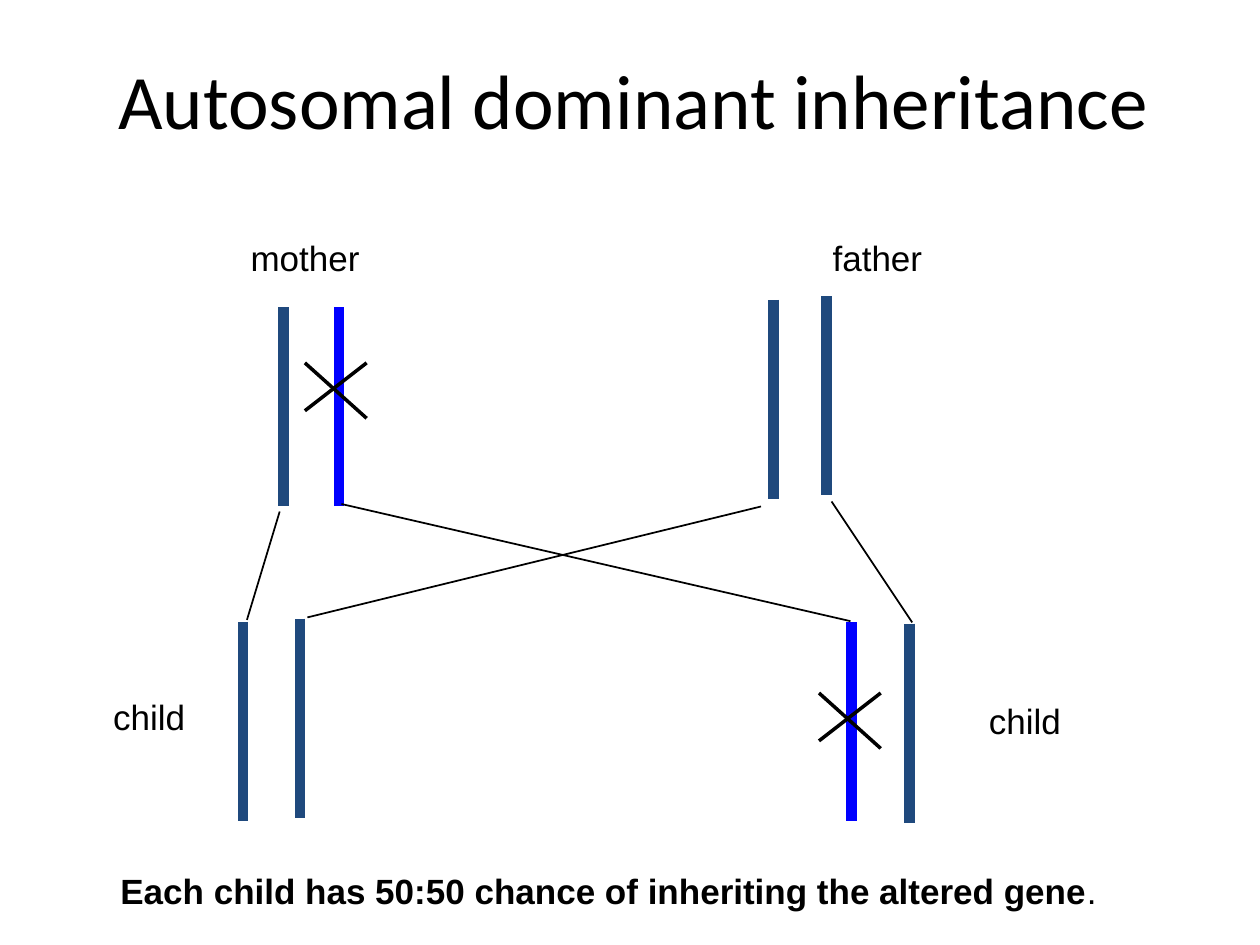
import pptx
import pptx.util
import pptx.dml.color
import pptx.enum.shapes
import pptx.enum.text
import pptx.oxml.ns
import lxml.etree

Inches = pptx.util.Inches
ALIGN = pptx.enum.text.PP_ALIGN
COLORS = {"gene": "1F497D", "altered": "0000FF", "ink": "000000"}

TITLE = "Autosomal dominant inheritance"
CAPTION = ("Each child has 50:50 chance of inheriting the altered gene", ".")
LABELS = [  # text, left, top, width
    ("mother", 1.89, 1.83, 1.1),
    ("father", 6.51, 1.83, 1.0),
    ("child", 0.8, 5.47, 0.78),
    ("child", 7.75, 5.5, 0.78),
]
BAR = 1.58
GENES = [  # x, top, color
    (2.25, 2.44, "gene"), (2.69, 2.44, "altered"),
    (6.14, 2.38, "gene"), (6.56, 2.35, "gene"),
    (2.38, 4.91, "gene"), (1.93, 4.94, "gene"),
    (6.76, 4.94, "altered"), (7.22, 4.95, "gene"),
]
CROSSES = [(2.42, 2.88), (6.5, 5.5)]
PATHS = [  # parent gene to child gene
    (2.22, 4.06, 1.96, 4.92), (2.71, 4, 6.75, 4.93),
    (6.04, 4.02, 2.44, 4.9), (6.6, 3.98, 7.24, 4.94),
]


def rgb(name):
    return pptx.dml.color.RGBColor.from_string(COLORS[name])


def style(run, size, font="Arial", bold=False):
    run.font.size = pptx.util.Pt(size)
    run.font.name = font
    run.font.bold = bold
    run.font.color.rgb = rgb("ink")


def add_line(slide, x1, y1, x2, y2, color, width):
    line = slide.shapes.add_connector(
        pptx.enum.shapes.MSO_CONNECTOR.STRAIGHT,
        Inches(x1), Inches(y1), Inches(x2), Inches(y2))
    line.line.color.rgb = rgb(color)
    line.line.width = pptx.util.Pt(width)
    lxml.etree.SubElement(line._element.spPr, pptx.oxml.ns.qn("a:effectLst"))


def add_text(slide, text, left, top, width):
    box = slide.shapes.add_textbox(
        Inches(left), Inches(top), Inches(width), Inches(0.44))
    box.text_frame.word_wrap = False
    para = box.text_frame.paragraphs[0]
    para.text = text
    style(para.runs[0], 20)
    return para


def main():
    deck = pptx.Presentation()
    deck.slide_width, deck.slide_height = Inches(10), Inches(7.5)
    slide = deck.slides.add_slide(deck.slide_layouts[5])

    title = slide.shapes.title
    title.left, title.top = Inches(0.42), Inches(0)
    title.width, title.height = Inches(9.22), Inches(1.57)
    title.text_frame.text = TITLE
    title.text_frame.vertical_anchor = pptx.enum.text.MSO_ANCHOR.MIDDLE
    para = title.text_frame.paragraphs[0]
    para.alignment = ALIGN.CENTER
    style(para.runs[0], 44, "Calibri")

    for x, top, color in GENES:
        add_line(slide, x, top, x, top + BAR, color, 6)
    for x, y in CROSSES:
        add_line(slide, x, y, x + 0.49, y + 0.44, "ink", 2)
        add_line(slide, x + 0.49, y, x, y + 0.38, "ink", 2)
    for ends in PATHS:
        add_line(slide, *ends, "ink", 1)

    for label in LABELS:
        add_text(slide, *label)
    para = add_text(slide, CAPTION[0], 0.83, 6.85, 8)
    para.alignment = ALIGN.CENTER
    para.runs[0].font.bold = True
    stop = para.add_run()
    stop.text = CAPTION[1]
    style(stop, 20)

    deck.save("out.pptx")


if __name__ == "__main__":
    main()
